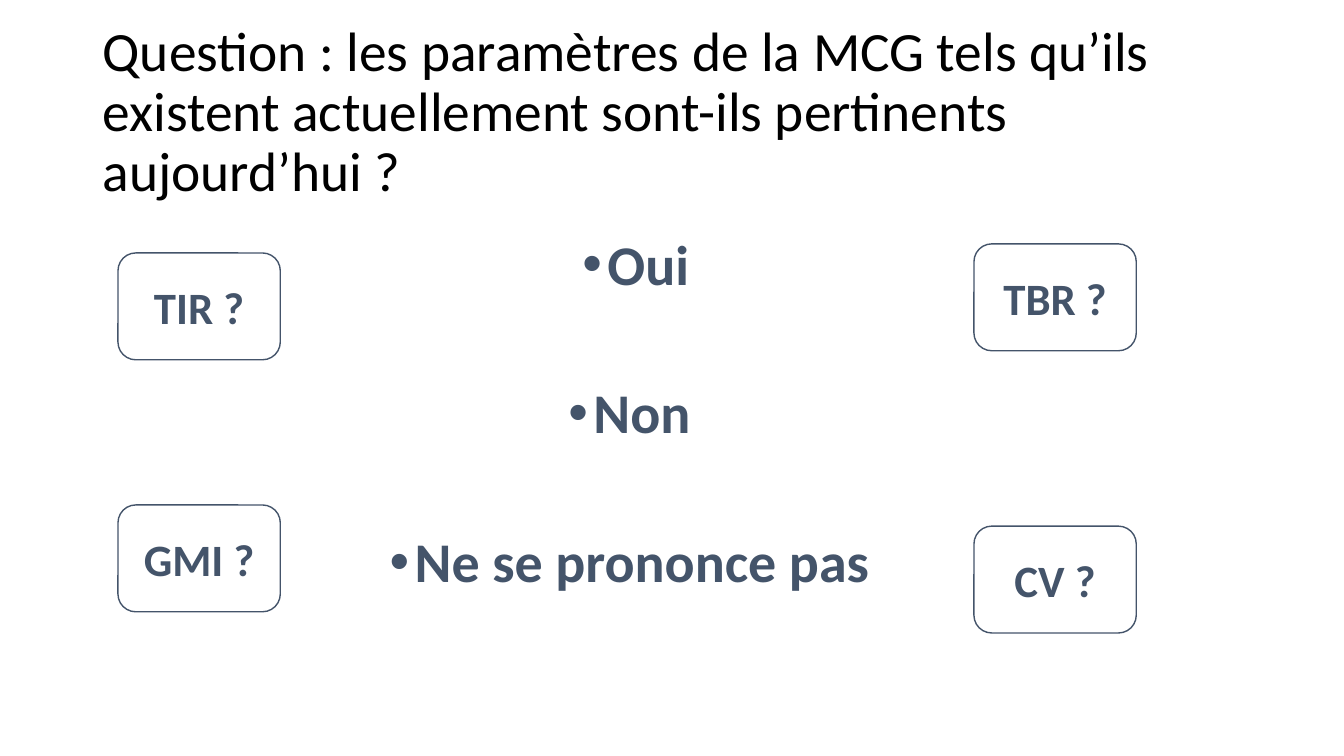
from dataclasses import dataclass

from lxml.etree import SubElement
from pptx import Presentation
from pptx.dml.color import RGBColor
from pptx.enum.shapes import MSO_SHAPE
from pptx.enum.text import MSO_ANCHOR, PP_ALIGN
from pptx.oxml.ns import qn
from pptx.text.text import TextFrame, _Paragraph
from pptx.util import Emu, Pt

PX = 9144  # 100 px to the inch
COLORS = {"title": "000000", "slate": "44546A"}
FONT = "Calibri"


@dataclass(frozen=True)
class Parameter:
    label: str
    left: int
    top: int
    width: int = 161
    height: int = 106


PARAMETERS = [
    Parameter("TIR ?", 117, 251),
    Parameter("GMI ?", 117, 501),
    Parameter("TBR ?", 966, 242),
    Parameter("CV ?", 966, 522),
]
ANSWERS = ["Oui", "Non ", "Ne se prononce pas "]


def px(*lengths: int) -> list[Emu]:
    return [Emu(length * PX) for length in lengths]


def add_bullet(paragraph: _Paragraph, indent: int) -> None:
    properties = paragraph._p.get_or_add_pPr()
    properties.set("marL", str(indent * PX))
    properties.set("indent", str(-indent * PX))
    SubElement(properties, qn("a:buFont"), typeface="Arial")
    SubElement(properties, qn("a:buChar"), char="•")


def write(frame: TextFrame, *texts: str, size: float, color: str = "slate",
          bold: bool = True, align: PP_ALIGN = PP_ALIGN.CENTER,
          anchor: MSO_ANCHOR = MSO_ANCHOR.MIDDLE, line_spacing: float = 1.0,
          gap: int = 0, bullet_indent: int = 0) -> None:
    frame.word_wrap = True
    frame.vertical_anchor = anchor
    for index, text in enumerate(texts):
        paragraph = frame.add_paragraph() if index else frame.paragraphs[0]
        paragraph.alignment = align
        paragraph.line_spacing = line_spacing
        paragraph.space_before = Pt(gap if index else 0)
        if bullet_indent:
            add_bullet(paragraph, bullet_indent)
        run = paragraph.add_run()
        run.text = text
        run.font.name = FONT
        run.font.size = Pt(size)
        run.font.bold = bold
        run.font.color.rgb = RGBColor.from_string(COLORS[color])


def main() -> None:
    deck = Presentation()
    deck.slide_width, deck.slide_height = px(1333, 750)
    slide = deck.slides.add_slide(deck.slide_layouts[6])

    # Question
    question = slide.shapes.add_textbox(*px(92, 40, 1150, 145))
    write(question.text_frame,
          "Question : les paramètres de la MCG tels qu’ils existent "
          "actuellement sont-ils pertinents aujourd’hui ?",
          size=39.6, color="title", bold=False, align=PP_ALIGN.LEFT,
          line_spacing=0.9)

    # Possible answers
    answers = slide.shapes.add_textbox(*px(14, 230, 1233, 496))
    write(answers.text_frame, *ANSWERS, size=40, anchor=MSO_ANCHOR.TOP,
          line_spacing=0.9, gap=63, bullet_indent=25)

    # Parameters around the answers
    for parameter in PARAMETERS:
        card = slide.shapes.add_shape(
            MSO_SHAPE.ROUNDED_RECTANGLE,
            *px(parameter.left, parameter.top, parameter.width, parameter.height))
        card.shadow.inherit = False
        card.fill.background()
        card.line.color.rgb = RGBColor.from_string(COLORS["slate"])
        card.line.width = Pt(1)
        write(card.text_frame, parameter.label, size=32)

    deck.save("out.pptx")


if __name__ == "__main__":
    main()
